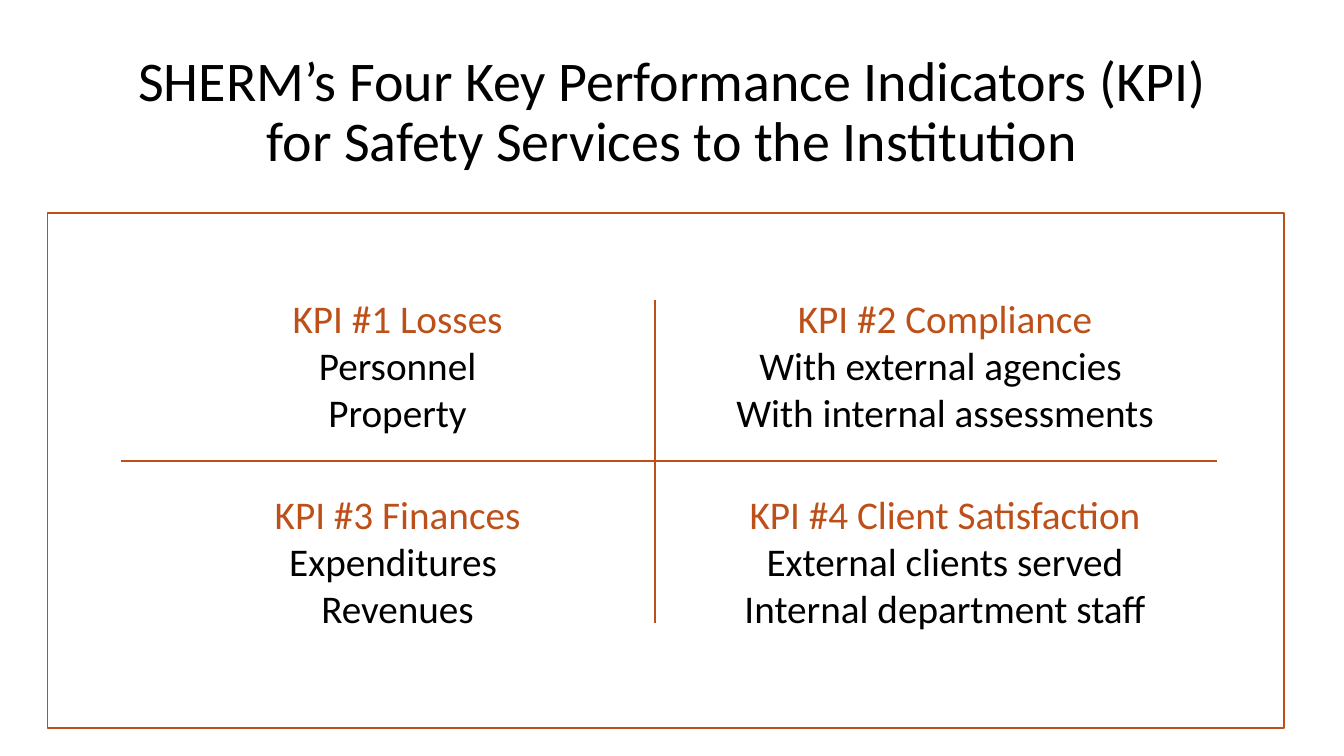
from dataclasses import dataclass

from lxml import etree
from pptx import Presentation
from pptx.dml.color import RGBColor
from pptx.enum.shapes import MSO_CONNECTOR, MSO_SHAPE
from pptx.enum.text import MSO_ANCHOR, MSO_AUTO_SIZE, PP_ALIGN
from pptx.oxml.ns import qn
from pptx.util import Pt

RECT = MSO_SHAPE.RECTANGLE
LINE = MSO_CONNECTOR.STRAIGHT
CENTER = PP_ALIGN.CENTER
MIDDLE = MSO_ANCHOR.MIDDLE
GROW = MSO_AUTO_SIZE.SHAPE_TO_FIT_TEXT

ORANGE = RGBColor(0xBD, 0x4F, 0x19)
BLACK = RGBColor(0x00, 0x00, 0x00)
FONT = "Calibri"


@dataclass(frozen=True)
class Box:
    left: float
    top: float
    width: float
    height: float


@dataclass(frozen=True)
class Kpi:
    box: Box
    head: str
    items: tuple[str, ...]


@dataclass(frozen=True)
class Rule:
    x1: float
    y1: float
    x2: float
    y2: float


TITLE = "SHERM’s Four Key Performance Indicators (KPI) for Safety Services to the Institution"
TITLE_BOX = Box(66, 28.8, 828, 104.4)
FRAME = Box(33.9, 152.1, 883.2, 368)

# Quadrants: left and right columns, upper and lower rows
LEFT, LEFT_W = 184.3, 199.4
RIGHT, RIGHT_W = 503.3, 343.4
UPPER, LOWER, TALL = 206.4, 346.3, 108.7

KPIS = (
    Kpi(Box(LEFT, UPPER, LEFT_W, TALL), "KPI #1 Losses", ("Personnel", "Property")),
    Kpi(Box(LEFT, LOWER, LEFT_W, TALL), "KPI #3 Finances", ("Expenditures ", "Revenues")),
    Kpi(Box(RIGHT, UPPER, RIGHT_W, TALL), "KPI #2 Compliance",
        ("With external agencies ", "With internal assessments")),
    Kpi(Box(RIGHT, LOWER, RIGHT_W, TALL), "KPI #4 Client Satisfaction",
        ("External clients served", "Internal department staff")),
)
RULES = (Rule(86.4, 329, 869, 329), Rule(468, 214.6, 468, 445))


def add_text(slide, box: Box, lines: tuple[str, ...], size: float):
    shape = slide.shapes.add_textbox(
        Pt(box.left), Pt(box.top), Pt(box.width), Pt(box.height))
    frame = shape.text_frame
    frame.word_wrap = True
    frame.text = "\n".join(lines)
    for para in frame.paragraphs:
        para.alignment = CENTER
        for run in para.runs:
            run.font.name = FONT
            run.font.size = Pt(size)
            run.font.color.rgb = BLACK
    return frame


def add_title(slide) -> None:
    frame = add_text(slide, TITLE_BOX, (TITLE,), 40)
    frame.vertical_anchor = MIDDLE
    frame.paragraphs[0].line_spacing = 0.9


def add_kpi(slide, kpi: Kpi) -> None:
    frame = add_text(slide, kpi.box, (kpi.head, *kpi.items), 28)
    frame.auto_size = GROW
    frame.paragraphs[0].runs[0].font.color.rgb = ORANGE


def add_rule(slide, rule: Rule) -> None:
    line = slide.shapes.add_connector(
        LINE, Pt(rule.x1), Pt(rule.y1), Pt(rule.x2), Pt(rule.y2))
    line.line.color.rgb = ORANGE
    line.line.width = Pt(1.5)
    etree.SubElement(line._element.spPr, qn("a:effectLst"))


def add_frame(slide, box: Box) -> None:
    shape = slide.shapes.add_shape(
        RECT, Pt(box.left), Pt(box.top), Pt(box.width), Pt(box.height))
    shape.shadow.inherit = False
    shape.fill.background()
    shape.line.color.rgb = ORANGE
    shape.line.width = Pt(1)


def main() -> None:
    deck = Presentation()
    deck.slide_width, deck.slide_height = Pt(960), Pt(540)
    slide = deck.slides.add_slide(deck.slide_layouts[6])

    # Title
    add_title(slide)

    # Four quadrants and the cross between them
    for kpi in KPIS:
        add_kpi(slide, kpi)
    for rule in RULES:
        add_rule(slide, rule)

    # Outer frame
    add_frame(slide, FRAME)

    deck.save("out.pptx")


if __name__ == "__main__":
    main()
